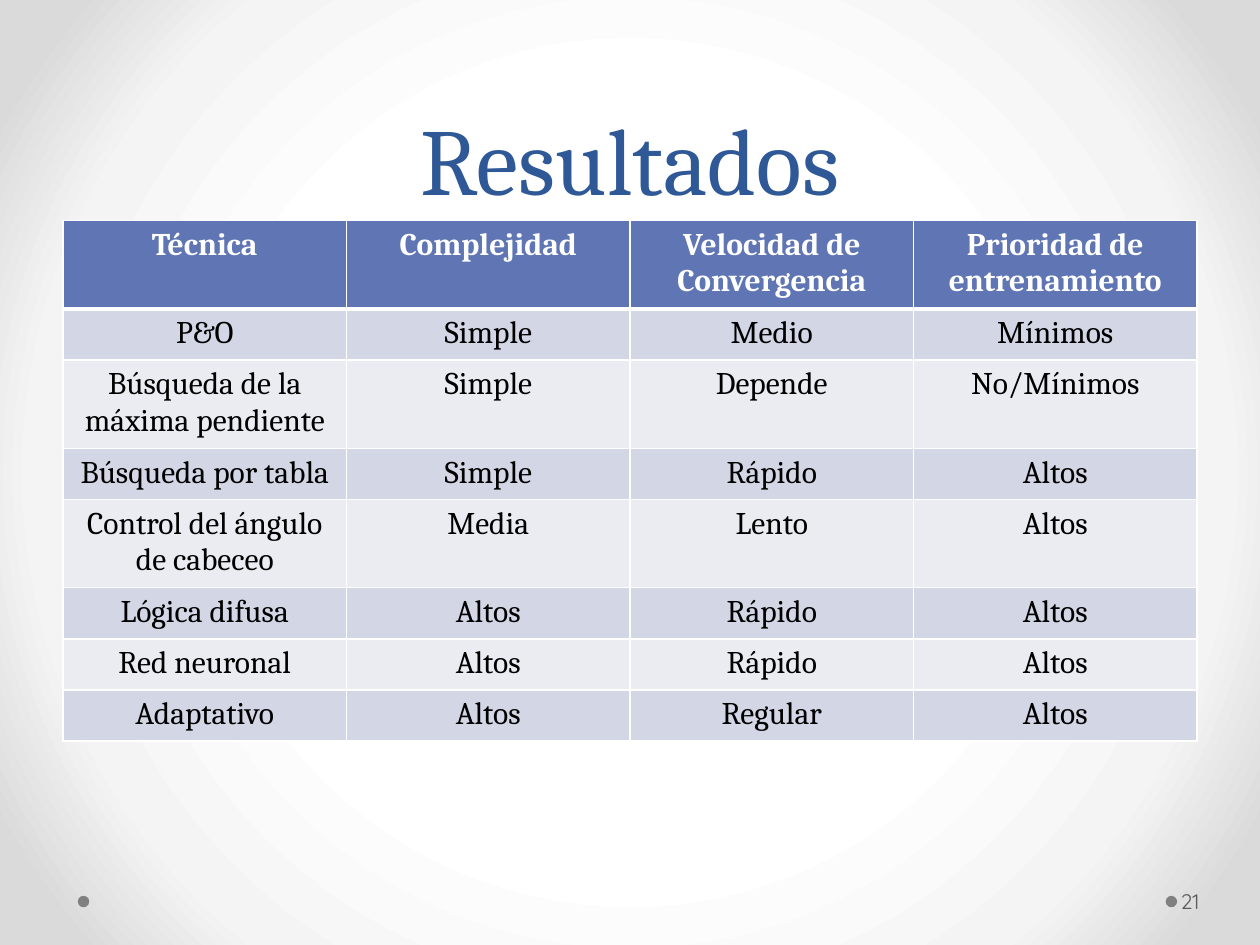
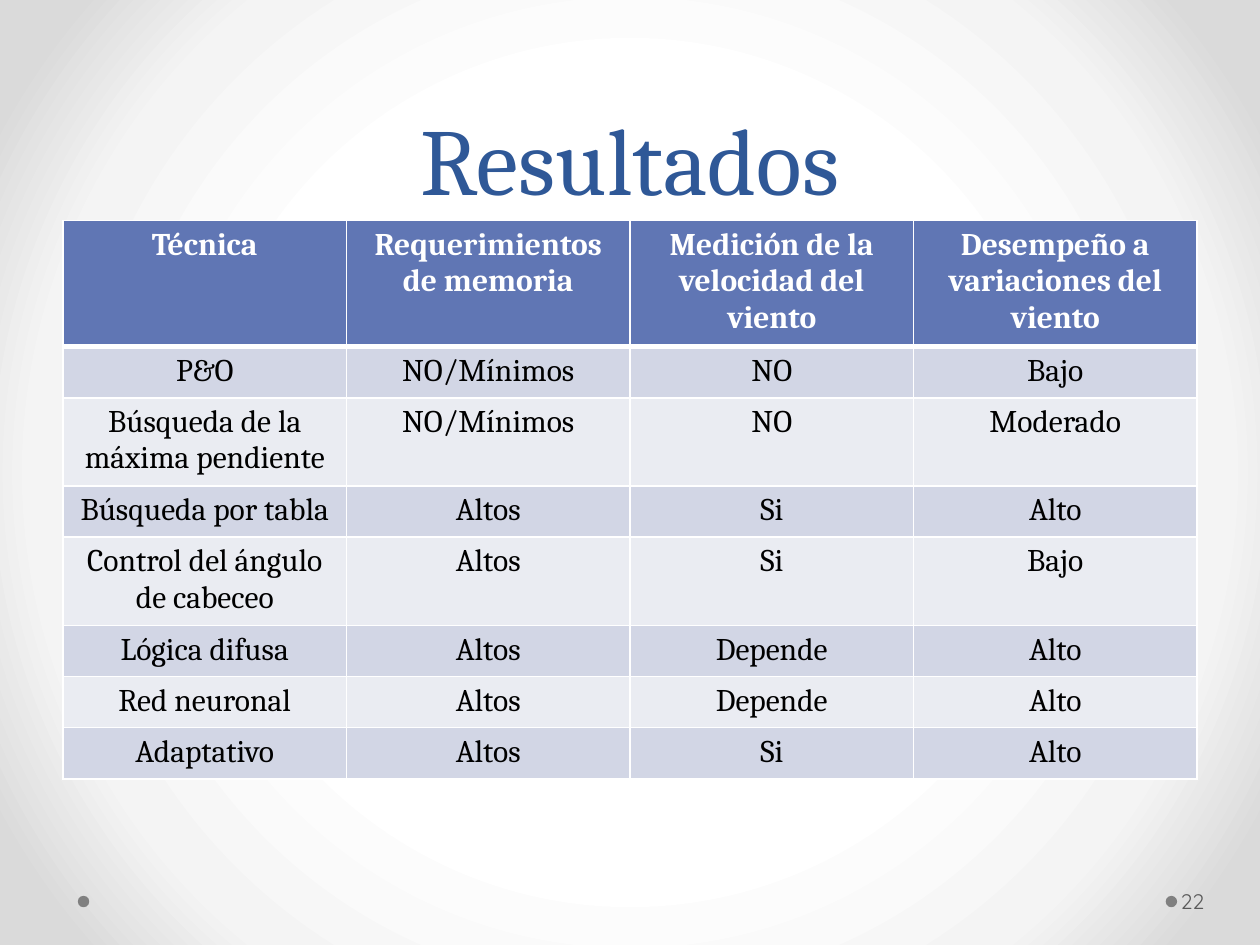
from pptx import Presentation
from pptx.dml.color import RGBColor as Rgb
from pptx.enum.shapes import MSO_SHAPE as Kind
from pptx.enum.text import MSO_ANCHOR as Anchor, PP_ALIGN as Align
from pptx.oxml import parse_xml
from pptx.oxml.ns import nsdecls, qn
from pptx.util import Cm, Pt

HUES = {
    "title": "2F5897", "head": "6076B4", "odd": "D2D6E5", "even": "EAECF2",
    "white": "FFFFFF", "black": "000000", "dot": "808080", "page": "595959",
    "mist": "F4F4F4", "edge": "DADADA",
}
FONTS = {
    "title": {"name": "Cambria", "size": Pt(54)},
    "head": {"name": "Cambria", "size": Pt(18), "bold": True},
    "body": {"name": "Cambria", "size": Pt(18), "bold": False},
    "page": {"name": "Quicksand", "size": Pt(12)},
}
TITLE = {"word_wrap": True, "vertical_anchor": Anchor.BOTTOM}
PAGE = {"word_wrap": True, "vertical_anchor": Anchor.MIDDLE,
        "margin_left": Cm(0.08), "margin_right": Cm(0.13)}

# Each slide: page number, headings, and the values beside each technique
NAMES = ["P&O", "Búsqueda de la máxima pendiente", "Búsqueda por tabla",
         "Control del ángulo de cabeceo", "Lógica difusa", "Red neuronal",
         "Adaptativo"]
PAGES = [
    (21, ["Técnica", "Complejidad", "Velocidad de Convergencia",
          "Prioridad de entrenamiento"],
     [["Simple", "Medio", "Mínimos"],
      ["Simple", "Depende", "No/Mínimos"],
      ["Simple", "Rápido", "Altos"],
      ["Media", "Lento", "Altos"],
      ["Altos", "Rápido", "Altos"],
      ["Altos", "Rápido", "Altos"],
      ["Altos", "Regular", "Altos"]]),
    (22, ["Técnica", "Requerimientos de memoria",
          "Medición de la velocidad del viento",
          "Desempeño a variaciones del viento"],
     [["NO/Mínimos", "NO", "Bajo"],
      ["NO/Mínimos", "NO", "Moderado"],
      ["Altos", "Si", "Alto"],
      ["Altos", "Si", "Bajo"],
      ["Altos", "Depende", "Alto"],
      ["Altos", "Depende", "Alto"],
      ["Altos", "Si", "Alto"]]),
]


def write(frame, text, font, hue, align):
    """Put one formatted line of text into a frame and return its paragraph."""
    para = frame.paragraphs[0]
    para.alignment = align
    run = para.add_run()
    run.text = text
    for key, value in FONTS[font].items():
        setattr(run.font, key, value)
    run.font.color.rgb = Rgb.from_string(HUES[hue])
    return para


def add_box(slide, place, form):
    """Add a text box with the given frame settings."""
    frame = slide.shapes.add_textbox(*map(Cm, place)).text_frame
    for key, value in form.items():
        setattr(frame, key, value)
    return frame


deck = Presentation()
deck.slide_width, deck.slide_height = Cm(25.4), Cm(19.05)

# Shared background: a round gradient on the master
master = deck.slide_master
master.background.fill.solid()
solid = master.element.find(".//" + qn("p:bgPr")).find(qn("a:solidFill"))
stops = "".join(
    f'<a:gs pos="{pos * 1000}"><a:srgbClr val="{HUES[hue]}"/></a:gs>'
    for pos, hue in [(50, "white"), (76, "mist"), (92, "edge")])
solid.getparent().replace(solid, parse_xml(
    f'<a:gradFill {nsdecls("a")} rotWithShape="1"><a:gsLst>{stops}</a:gsLst>'
    '<a:path path="circle"><a:fillToRect l="50000" t="50000" r="50000" '
    'b="50000"/></a:path></a:gradFill>'))

for number, heads, values in PAGES:
    slide = deck.slides.add_slide(deck.slide_layouts[6])

    # Footer dots
    for left in (23.5, 1.57):
        dot = slide.shapes.add_shape(
            Kind.OVAL, Cm(left), Cm(18.06), Cm(0.23), Cm(0.23))
        dot.shadow.inherit = False
        dot.fill.solid()
        dot.fill.fore_color.rgb = Rgb.from_string(HUES["dot"])
        dot.line.fill.background()

    # Title
    frame = add_box(slide, (1.27, 0, 22.86, 4.45), TITLE)
    para = write(frame, "Resultados", "title", "title", Align.CENTER)
    para.line_spacing = Pt(58)

    # Table
    rows = [heads] + [[name] + row for name, row in zip(NAMES, values)]
    high = Cm(1.03)
    grid = slide.shapes.add_table(
        len(rows), len(heads), Cm(1.27), Cm(4.45), Cm(22.86),
        high * len(rows)).table
    for r, row in enumerate(rows):
        grid.rows[r].height = high
        fill = "head" if r == 0 else "odd" if r % 2 else "even"
        font, hue = ("body", "black") if r else ("head", "white")
        wide = {"L": 1, "R": 1, "T": 3 if r == 1 else 1, "B": 1 if r else 3}
        for c, text in enumerate(row):
            cell = grid.cell(r, c)
            write(cell.text_frame, text, font, hue, Align.CENTER)
            props = cell._tc.get_or_add_tcPr()
            for side, width in wide.items():
                props.append(parse_xml(
                    f'<a:ln{side} {nsdecls("a")} w="{Pt(width)}"><a:solidFill>'
                    f'<a:srgbClr val="{HUES["white"]}"/></a:solidFill>'
                    f'</a:ln{side}>'))
            cell.fill.solid()
            cell.fill.fore_color.rgb = Rgb.from_string(HUES[fill])

    # Page number
    frame = add_box(slide, (23.72, 17.65, 1.55, 1.02), PAGE)
    write(frame, str(number), "page", "page", Align.LEFT)

deck.save("out.pptx")
